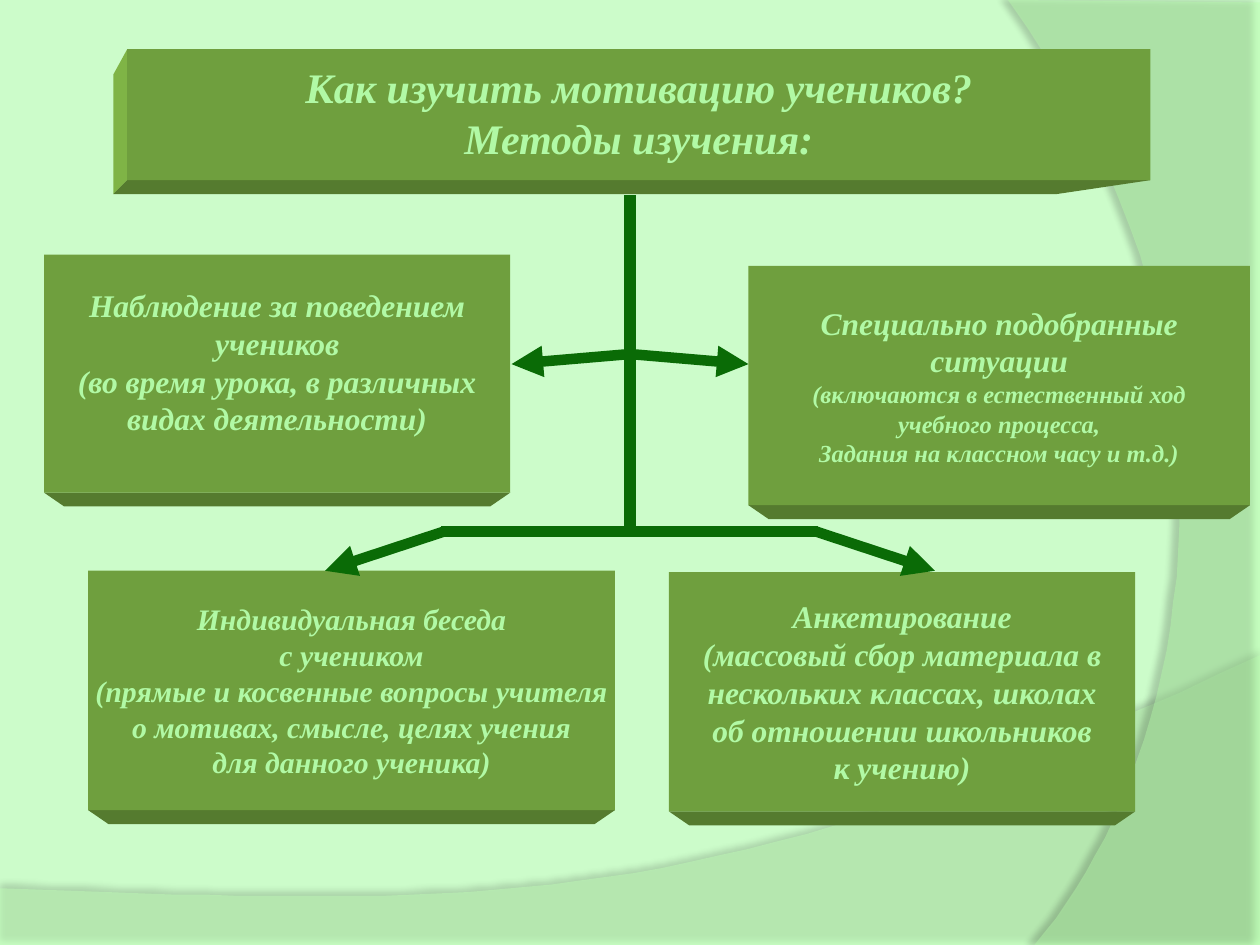
from lxml.etree import SubElement
from pptx import Presentation
from pptx.dml.color import RGBColor
from pptx.enum.shapes import MSO_CONNECTOR as Line, MSO_SHAPE as Preset
from pptx.enum.text import MSO_ANCHOR as Anchor, PP_ALIGN as Align
from pptx.oxml.ns import qn
from pptx.util import Inches, Pt

COLORS = {
    "background": "CCFCCA", "wave": "C0FFB7", "arc": "B7FFAB",
    "face": "6F9F3E", "bottom": "557B2F", "left": "7FB446",
    "text": "B1F9A5", "arrow": "0A6B06",
}
COLUMNS, ROWS = 1000, 750

prs = Presentation()
prs.slide_width, prs.slide_height = Inches(10), Inches(7.5)
CELL = prs.slide_width // COLUMNS
slide = prs.slides.add_slide(prs.slide_layouts[6])
shapes = slide.shapes
slide.background.fill.solid()
slide.background.fill.fore_color.rgb = RGBColor.from_string(COLORS["background"])


def paint(shape, color):
    shape.fill.solid()
    shape.fill.fore_color.rgb = RGBColor.from_string(COLORS[color])
    shape.line.fill.background()
    shape.shadow.inherit = False
    return shape


def outline(points, color):
    """Draw a closed filled polygon from grid points."""
    builder = shapes.build_freeform(*points[0], scale=CELL)
    builder.add_line_segments(points[1:], close=True)
    return paint(builder.convert_to_shape(), color)


# Backdrop: straight corners, one Bezier edge, opacity, shadow opacity, direction
backdrop = [
    ("wave", [(0, 705), (0, 751), (1000, 751)],
     [(1000, 520), (559, 729), (391, 719), (0, 705)], 45, 35, 3.5, 270),
    ("arc", [(800, 0), (1000, 2), (1000, 750)],
     [(821, 750), (935, 619), (1018, 300), (800, 0)], 40, 45, 4, 180),
]
STEPS = 40
for color, corners, bezier, opacity, shade, distance, angle in backdrop:
    curve = []
    for step in range(STEPS + 1):
        t = step / STEPS
        weights = ((1 - t) ** 3, 3 * t * (1 - t) ** 2, 3 * t * t * (1 - t), t ** 3)
        curve.append(tuple(sum(w * p[axis] for w, p in zip(weights, bezier))
                           for axis in (0, 1)))
    region = outline(corners + curve, color)
    properties = region._element.spPr
    fill_color = properties.find(qn("a:solidFill"))[0]
    SubElement(fill_color, qn("a:alpha"), val=str(opacity * 1000))
    shadow = SubElement(properties.find(qn("a:effectLst")), qn("a:outerShdw"),
                        blurRad=str(Pt(4)), dist=str(Pt(distance)),
                        dir=str(angle * 60000), algn="ctr", rotWithShape="0")
    shadow_color = SubElement(shadow, qn("a:srgbClr"), val="000000")
    SubElement(shadow_color, qn("a:alpha"), val=str(shade * 1000))

# Blocks: left, top, width, height, extra bottom margin, lines with sizes
blocks = [
    (101, 39, 812, 104, 4, [("Как изучить мотивацию учеников?", 24),
                            ("Методы изучения:", 24)]),
    (35, 202, 370, 189, 19, [("Наблюдение за поведением", 18), ("учеников", 18),
                             ("(во время урока, в различных", 18),
                             ("видах деятельности)", 18)]),
    (594, 211, 398, 190, 0, [("Специально подобранные", 18), ("ситуации", 18),
                             ("(включаются в естественный ход", 14),
                             ("учебного процесса,", 14),
                             ("Задания на классном часу и т.д.)", 14)]),
    (70, 453, 418, 190, 0, [("Индивидуальная беседа", 17), ("с учеником", 17),
                            ("(прямые и косвенные вопросы учителя", 17),
                            ("о мотивах, смысле, целях учения", 17),
                            ("для данного ученика)", 17)]),
    (531, 454, 370, 190, 0, [("Анкетирование", 18),
                             ("(массовый сбор материала в", 18),
                             ("нескольких классах, школах", 18),
                             ("об отношении школьников", 18),
                             ("к учению)", 18)]),
]
DEPTH, INSET = 11, 16
for index, (left, top, width, height, lift, lines) in enumerate(blocks):
    right, base = left + width, top + height
    if index == 0:
        outline([(left, top), (left - 11, top + 20), (left - 11, base + DEPTH),
                 (left, base)], "left")
        lower_edge = [(right - 74, base + DEPTH), (left - 11, base + DEPTH)]
    else:
        lower_edge = [(right - INSET, base + DEPTH), (left + INSET, base + DEPTH)]
    outline([(left, base), (right, base)] + lower_edge, "bottom")

    box = [CELL * side for side in (left, top, width, height)]
    face = paint(shapes.add_shape(Preset.RECTANGLE, *box), "face")
    frame = face.text_frame
    frame_format = {"word_wrap": False, "vertical_anchor": Anchor.MIDDLE,
                    "margin_top": CELL * 5, "margin_bottom": CELL * (5 + lift)}
    for name, value in frame_format.items():
        setattr(frame, name, value)
    for number, (words, size) in enumerate(lines):
        paragraph = frame.add_paragraph() if number else frame.paragraphs[0]
        paragraph.alignment = Align.CENTER
        run = paragraph.add_run()
        run.text = words
        font_format = {"name": "Times New Roman", "size": Pt(size),
                       "bold": True, "italic": True}
        for name, value in font_format.items():
            setattr(run.font, name, value)
        run.font.color.rgb = RGBColor.from_string(COLORS["text"])

# Branches: start, end, line width, arrowhead
branches = [
    ((500, 155), (500, 422), 6.75, False),
    ((350, 422), (649, 422), 6, False),
    ((500, 281), (594, 289), 6, True),
    ((500, 281), (406, 289), 6, True),
    ((648, 422), (742, 453), 6, True),
    ((352, 422), (258, 453), 6, True),
]
for start, end, weight, has_head in branches:
    ends = [CELL * place for place in start + end]
    branch = shapes.add_connector(Line.STRAIGHT, *ends)
    branch.line.width = Pt(weight)
    branch.line.color.rgb = RGBColor.from_string(COLORS["arrow"])
    if has_head:
        SubElement(branch.line._get_or_add_ln(), qn("a:tailEnd"), type="triangle")
    SubElement(branch._element.spPr, qn("a:effectLst"))

prs.save("out.pptx")
